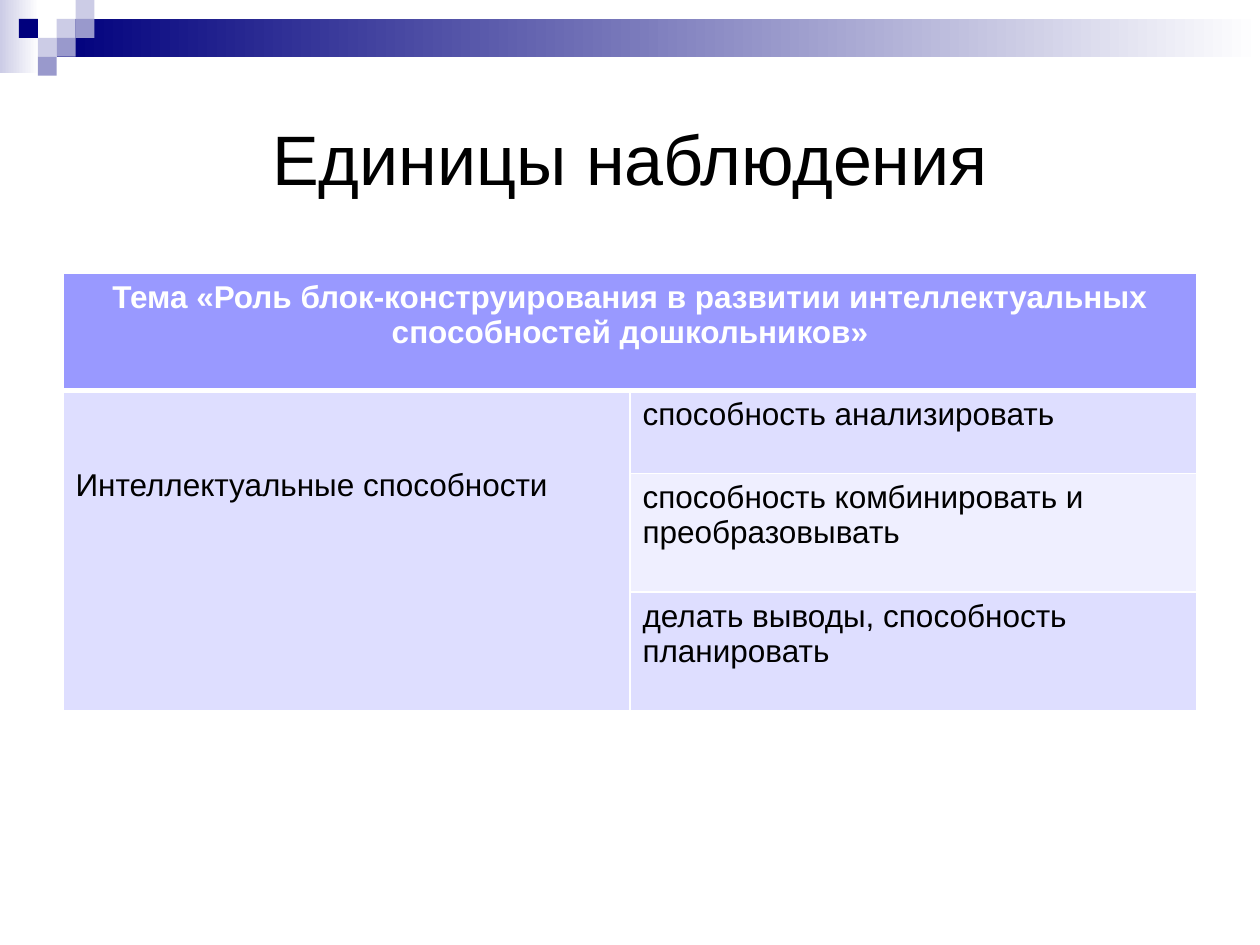
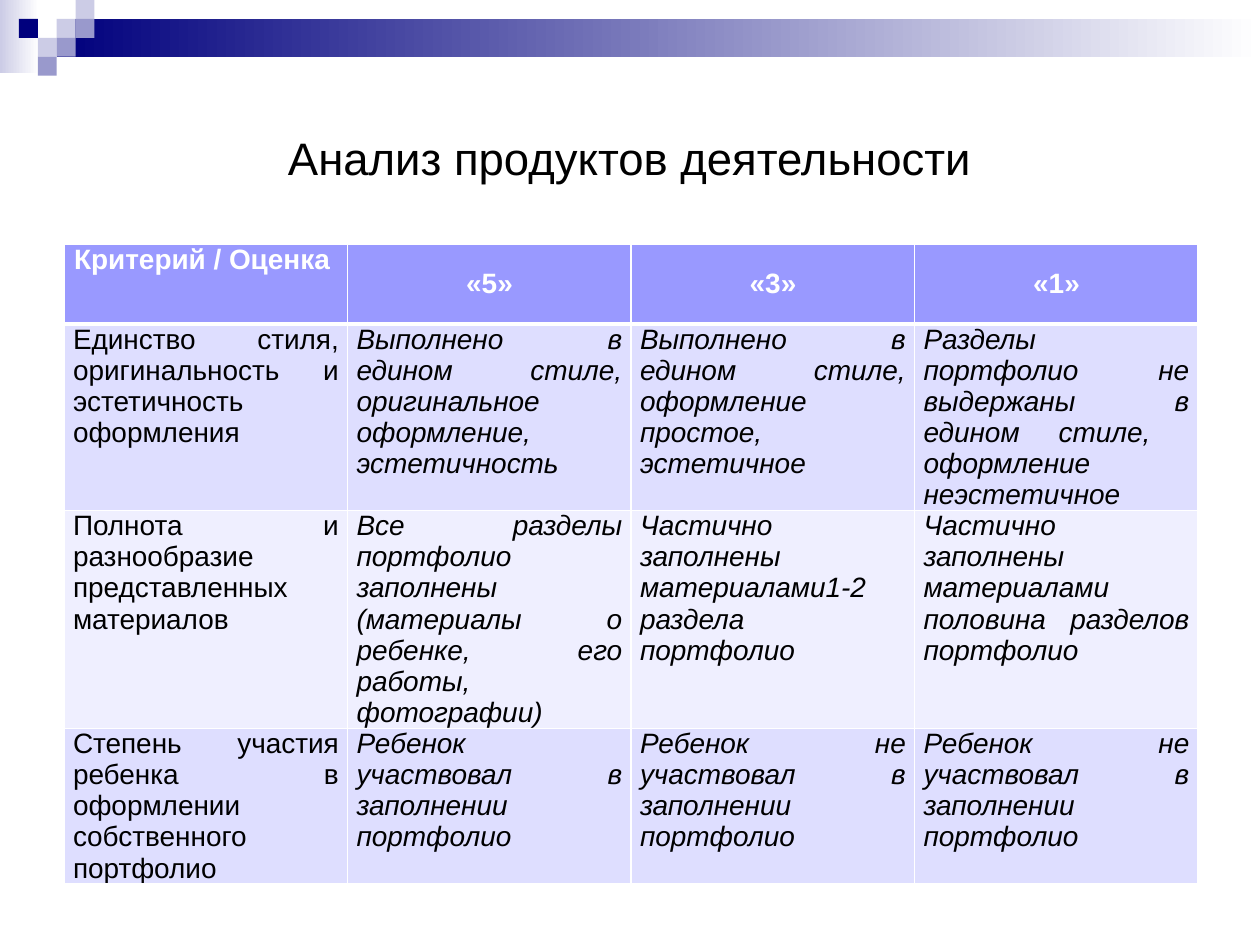
from lxml import etree
from pptx import Presentation
from pptx import util as u
from pptx.dml.color import RGBColor
from pptx.enum import shapes, text
from pptx.oxml.ns import qn

FONT = "Arial"
NAVY, LILAC, MAUVE = "00007D", "CCCCE6", "9999CC"
WHITE, BLACK = "FFFFFF", "000000"
HEADER, BAND_DARK, BAND_LIGHT = "9999FF", "DEDEFF", "EFEFFF"

TILE = 0.15
GRADIENT_BANDS = [  # left, top, width, height, start colour
    (0, 0, 0.31, 0.58, LILAC),
    (0.45, 0.15, 9.55, 0.3, NAVY),
]
TILES = [  # column, row, colour
    (3, 1, LILAC), (4, 0, LILAC), (4, 1, MAUVE), (2, 2, LILAC),
    (1, 1, NAVY), (3, 2, MAUVE), (2, 3, MAUVE),
]

UNITS = [
    ["Тема «Роль блок-конструирования в развитии интеллектуальных "
     "способностей дошкольников»", ""],
    ["Интеллектуальные способности", "способность анализировать"],
    ["", "способность комбинировать и преобразовывать"],
    ["", "делать выводы, способность планировать"],
]
CRITERIA = [
    ["Критерий / Оценка ", "«5»", "«3»", "«1»"],
    ["Единство стиля, оригинальность и эстетичность оформления",
     "Выполнено в едином стиле, оригинальное оформление, эстетичность ",
     "Выполнено в едином стиле, оформление простое, эстетичное",
     "Разделы портфолио не выдержаны  в едином стиле,  оформление неэстетичное "],
    ["Полнота и разнообразие представленных материалов  ",
     "Все разделы портфолио заполнены (материалы о ребенке, его работы, фотографии)",
     "Частично заполнены материалами1-2 раздела портфолио",
     "Частично заполнены материалами половина разделов портфолио "],
    ["Степень участия ребенка в оформлении собственного портфолио ",
     "Ребенок участвовал в заполнении портфолио",
     "Ребенок не участвовал в заполнении портфолио ",
     "Ребенок не участвовал в заполнении портфолио "],
]


def color(value):
    return RGBColor.from_string(value)


def format_text(frame, size, value, align, bold=False, italic=False):
    for para in frame.paragraphs:
        para.alignment = align
        for span in para.runs:
            font = span.font
            font.name, font.size = FONT, u.Pt(size)
            font.bold, font.italic = bold, italic
            font.color.rgb = color(value)


def add_block(page, left, top, width, height):
    block = page.shapes.add_shape(
        shapes.MSO_SHAPE.RECTANGLE, *map(u.Inches, (left, top, width, height)))
    block.shadow.inherit = False
    block.line.fill.background()
    return block


def add_decoration(page):
    for left, top, width, height, start in GRADIENT_BANDS:
        fill = add_block(page, left, top, width, height).fill
        fill.gradient()
        fill.gradient_angle = 0
        for stop, value in zip(fill.gradient_stops, (start, WHITE)):
            stop.color.rgb = color(value)
    for column, row, value in TILES:
        tile = add_block(page, column * TILE, row * TILE, TILE, TILE)
        tile.fill.solid()
        tile.fill.fore_color.rgb = color(value)


def add_page(deck, title, size):
    page = deck.slides.add_slide(deck.slide_layouts[5])
    add_decoration(page)
    box = page.shapes.title
    box.left, box.top, box.width, box.height = map(u.Inches, (0.5, 0.5, 9, 1.5))
    box.text_frame.text = title
    box.text_frame.vertical_anchor = text.MSO_ANCHOR.MIDDLE
    format_text(box.text_frame, size, BLACK, text.PP_ALIGN.CENTER)
    return page


def set_borders(cell, row):
    """White rules of 1 pt, with 3 pt between the header and the body."""
    widths = {"L": 1, "R": 1, "T": 3 if row == 1 else 1, "B": 3 if row == 0 else 1}
    properties = cell._tc.get_or_add_tcPr()
    for side, width in widths.items():
        line = etree.SubElement(properties, qn(f"a:ln{side}"), w=str(u.Pt(width)))
        fill = etree.SubElement(line, qn("a:solidFill"))
        etree.SubElement(fill, qn("a:srgbClr"), val=WHITE)


def add_grid(page, rows, left, top, heights, size, align, margins, italic_body=False):
    columns = len(rows[0])
    table = page.shapes.add_table(
        len(rows), columns, u.Inches(left), u.Inches(top),
        u.Inches(9), u.Inches(sum(heights))).table
    for column in table.columns:
        column.width = u.Inches(9 / columns)
    for r, (values, height) in enumerate(zip(rows, heights)):
        table.rows[r].height = u.Inches(height)
        for c, value in enumerate(values):
            cell = table.cell(r, c)
            header = r == 0
            set_borders(cell, r)
            cell.fill.solid()
            cell.fill.fore_color.rgb = color(
                HEADER if header else BAND_DARK if r % 2 else BAND_LIGHT)
            cell.margin_left = cell.margin_right = u.Inches(margins[0])
            cell.margin_top = cell.margin_bottom = u.Inches(margins[1])
            cell.text_frame.text = value
            format_text(cell.text_frame, size, WHITE if header else BLACK,
                        text.PP_ALIGN.CENTER if header else align,
                        bold=header, italic=italic_body and not header and c > 0)
    return table


def build_units(deck):
    page = add_page(deck, "Единицы наблюдения", 40)
    table = add_grid(page, UNITS, 0.5, 2.17, [0.93, 0.66, 0.94, 0.94], 18,
                     text.PP_ALIGN.LEFT, (0.1, 0.05))
    table.cell(0, 0).merge(table.cell(0, 1))
    table.cell(1, 0).merge(table.cell(3, 0))
    table.cell(1, 0).margin_top = u.Inches(0.61)


def build_criteria(deck):
    page = add_page(deck, "Анализ продуктов деятельности", 26)
    table = add_grid(page, CRITERIA, 0.51, 1.94, [0.63, 1.48, 1.73, 1.23], 16,
                     text.PP_ALIGN.JUSTIFY, (0.07, 0), italic_body=True)
    for column in range(1, 4):
        table.cell(0, column).vertical_anchor = text.MSO_ANCHOR.MIDDLE


def main():
    deck = Presentation()
    deck.slide_width, deck.slide_height = u.Inches(10), u.Inches(7.5)
    build_units(deck)
    build_criteria(deck)
    deck.save("out.pptx")


if __name__ == "__main__":
    main()
